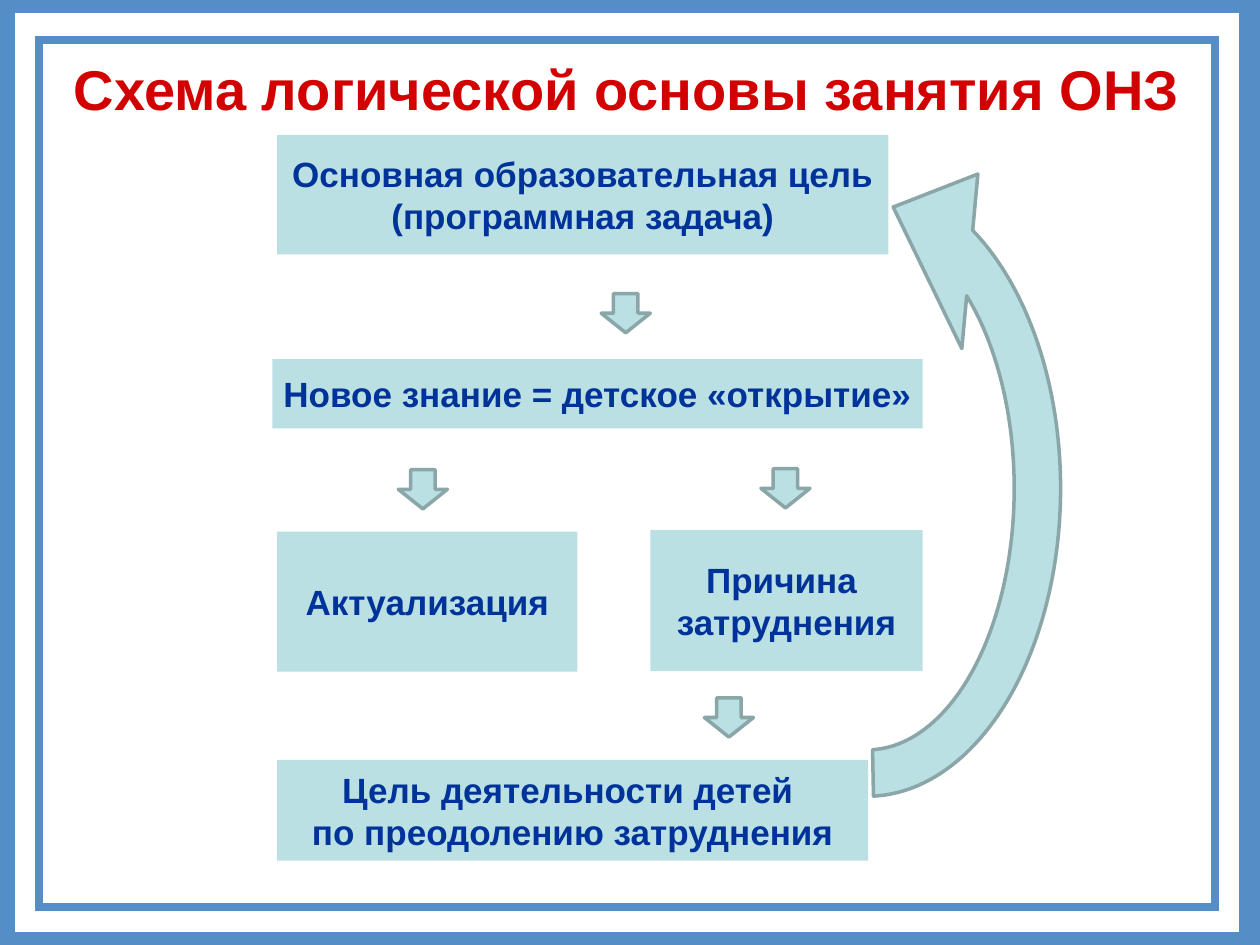
import pptx
import pptx.util
import pptx.dml.color
import pptx.enum.shapes
import pptx.enum.text
import pptx.oxml.ns
from lxml import etree

Cm = pptx.util.Cm
Pt = pptx.util.Pt
RGBColor = pptx.dml.color.RGBColor
KIND = pptx.enum.shapes.MSO_SHAPE
ANCHOR = pptx.enum.text.MSO_ANCHOR
ALIGN = pptx.enum.text.PP_ALIGN

RED = RGBColor(0xD2, 0x00, 0x00)
NAVY = RGBColor(0x00, 0x33, 0x99)
BLUE = RGBColor(0x55, 0x8E, 0xC7)
AQUA = RGBColor(0xBB, 0xE0, 0xE3)
GREY = RGBColor(0x8A, 0xA6, 0xA8)


class Board:
    """Style and current slide of the scheme."""

    font = "Arial"

    def __init__(self, slide):
        self.slide = slide

    def shape(self, kind, area, fill=None, line=None, width=0):
        item = self.slide.shapes.add_shape(kind, *map(Cm, area))
        item.shadow.inherit = False
        if fill is None:
            item.fill.background()
        else:
            item.fill.solid()
            item.fill.fore_color.rgb = fill
        if line is None:
            item.line.fill.background()
        else:
            item.line.color.rgb = line
            item.line.width = Pt(width)
        return item

    def label(self, item, lines, size, color, wrap=False, space=None):
        frame = item.text_frame
        frame.word_wrap = wrap
        frame.vertical_anchor = ANCHOR.MIDDLE
        frame.text = "\n".join(lines)
        for para in frame.paragraphs:
            para.alignment = ALIGN.CENTER
            para.line_spacing = space
            para.font.name = self.font
            para.font.size = Pt(size)
            para.font.bold = True
            para.font.color.rgb = color

    def title(self, text, area):
        item = self.slide.shapes.add_textbox(*map(Cm, area))
        self.label(item, [text], 32, RED, wrap=True, space=1.5)

    def box(self, area, *lines):
        self.label(self.shape(KIND.RECTANGLE, area, AQUA), lines, 20, NAVY)

    def border(self, area, width):
        item = self.shape(KIND.RECTANGLE, area, line=BLUE, width=width)
        # Square corners
        edge = item.element.spPr.find(pptx.oxml.ns.qn("a:ln"))
        etree.SubElement(edge, pptx.oxml.ns.qn("a:miter"), lim="800000")

    def arrow(self, left, top):
        self.shape(KIND.DOWN_ARROW, (left, top, 0.99, 0.79), AQUA, GREY, 2)

    def loop(self, area, bends):
        item = self.shape(KIND.CIRCULAR_ARROW, area, AQUA, GREY, 2)
        item.rotation = 90
        item.element.spPr.find(pptx.oxml.ns.qn("a:xfrm")).set("flipH", "1")
        for index, bend in enumerate(bends):
            item.adjustments[index] = bend


def main():
    deck = pptx.Presentation()
    deck.slide_width, deck.slide_height = Cm(25.4), Cm(19.05)
    board = Board(deck.slides.add_slide(deck.slide_layouts[6]))

    # Double border
    board.border((0.03, 0, 25.22, 19.05), 15)
    board.border((0.79, 0.81, 23.7, 17.48), 4.5)

    # Title
    board.title("Схема логической основы занятия ОНЗ", (0.79, 0.53, 23.7, 1.8))

    # Steps
    board.box((5.59, 2.72, 12.32, 2.41),
              "Основная образовательная цель", "(программная задача)")
    board.box((5.49, 7.24, 13.11, 1.4), "Новое знание = детское «открытие»")
    board.box((5.59, 10.72, 6.05, 2.82), "Актуализация")
    board.box((13.11, 10.69, 5.49, 2.84), "Причина ", "затруднения")
    board.box((5.59, 15.32, 11.91, 2.03),
              "Цель деятельности детей ", "по преодолению затруднения")

    # Arrows between steps
    for spot in ((12.12, 5.92), (8.03, 9.47), (15.34, 9.45), (14.2, 14.07)):
        board.arrow(*spot)

    # Return arrow from the last step to the first
    board.loop((9.98, 4.65, 15.01, 10.39),
               (0.09, 11.42, 201.42, 108.69, 0.17))

    deck.save("out.pptx")


if __name__ == "__main__":
    main()
